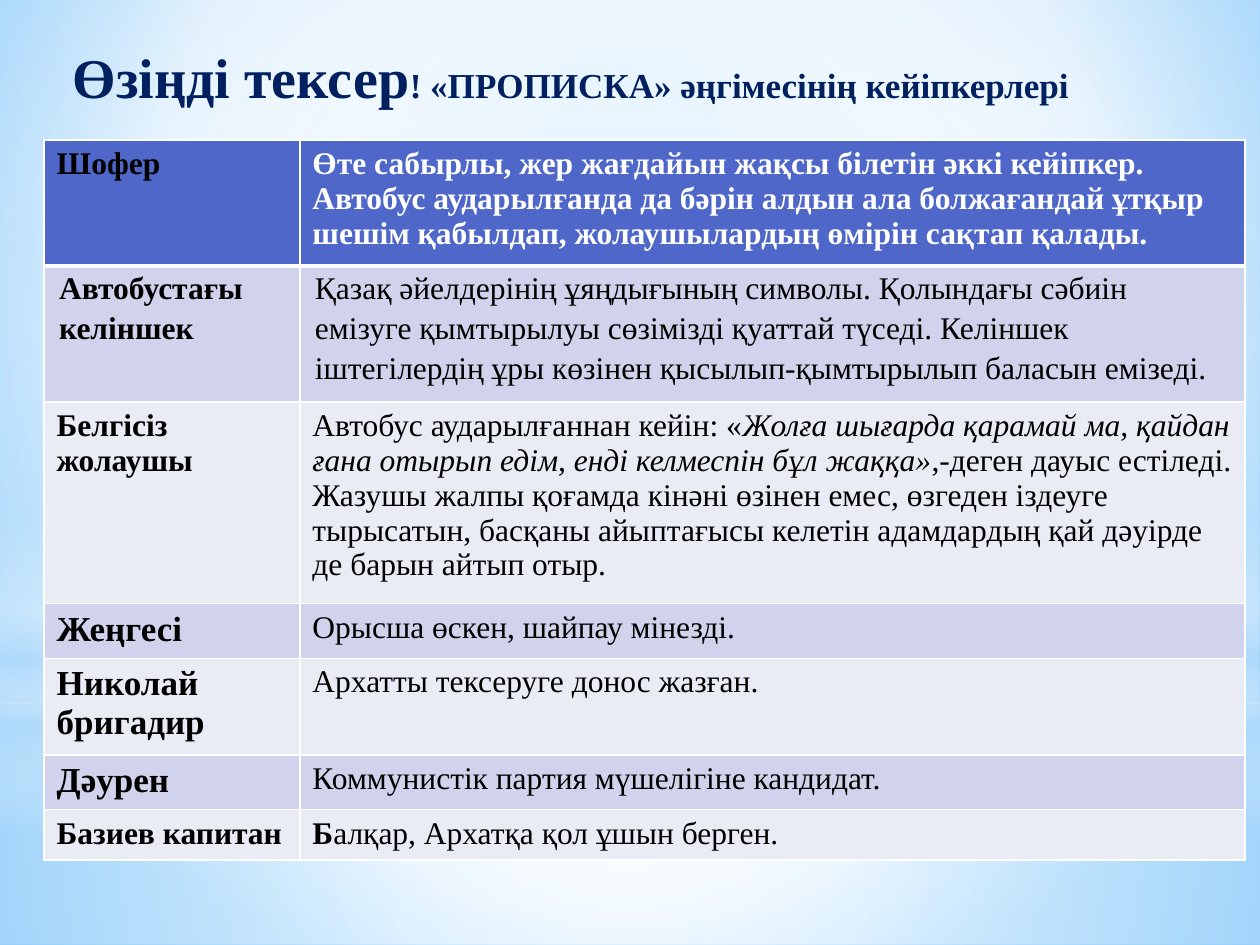
from lxml import etree
from pptx import Presentation
from pptx.dml.color import RGBColor
from pptx.enum.shapes import MSO_SHAPE
from pptx.oxml.ns import qn
from pptx.util import Inches, Pt

RECTANGLE = MSO_SHAPE.RECTANGLE
OVAL = MSO_SHAPE.OVAL
FONT = "Times New Roman"


def set_gradient(properties, stops, focus):
    gradient = etree.Element(qn("a:gradFill"), rotWithShape="1")
    stop_list = etree.SubElement(gradient, qn("a:gsLst"))
    for position, color, opacity in stops:
        stop = etree.SubElement(stop_list, qn("a:gs"), pos=str(position * 1000))
        color_element = etree.SubElement(stop, qn("a:srgbClr"), val=color)
        if opacity < 100:
            etree.SubElement(color_element, qn("a:alpha"), val=str(opacity * 1000))
    if focus:
        path = etree.SubElement(gradient, qn("a:path"), path="circle")
        sides = {side: str(value * 1000) for side, value in zip("ltrb", focus)}
        etree.SubElement(path, qn("a:fillToRect"), **sides)
    else:
        etree.SubElement(gradient, qn("a:lin"), ang="5400000", scaled="0")
    properties.replace(properties.find(qn("a:noFill")), gradient)


def add_run(paragraph, text, size, color, bold=False, italic=False):
    run = paragraph.add_run()
    run.text = text
    run.font.name = FONT
    run.font.size = Pt(size)
    run.font.bold = bold
    run.font.italic = italic
    run.font.color.rgb = RGBColor.from_string(color)


presentation = Presentation()
presentation.slide_width = Inches(10)
presentation.slide_height = Inches(7.5)
slide = presentation.slides.add_slide(presentation.slide_layouts[6])

slide.background.fill.background()
set_gradient(
    slide.element.find(".//" + qn("p:bgPr")),
    [(0, "9ED5FF", 100), (60, "FFFFFF", 100), (100, "5BB9FF", 100)],
    (20, 10, 20, 60),
)

center = (50, 50, 50, 50)
glows = [
    (RECTANGLE, 5.58, 1.92, center,
     [(0, "FFFFFF", 91), (37, "FFFFFF", 76), (100, "B4DCFA", 79)]),
    (RECTANGLE, 0, 5.58, center,
     [(0, "FFFFFF", 89), (48, "FFFFFF", 62), (100, "B4DCFA", 79)]),
    (RECTANGLE, 4.12, 2.5, None,
     [(0, "FFFFFF", 0), (29, "FFFFFF", 30), (45, "B4DCFA", 40),
      (55, "FFFFFF", 26), (65, "B4DCFA", 60), (100, "FFFFFF", 0)]),
    (OVAL, 1.75, 5.58, center, [(0, "FFFFFF", 100), (56, "FFFFFF", 0)]),
]
for kind, top, height, focus, stops in glows:
    shape = slide.shapes.add_shape(kind, 0, Inches(top), Inches(10), Inches(height))
    shape.shadow.inherit = False
    shape.line.fill.background()
    shape.fill.background()
    set_gradient(shape.element.spPr, stops, focus)

title = slide.shapes.add_textbox(Inches(0.43), Inches(0.29), Inches(9.37), Inches(1.34))
title.text_frame.word_wrap = True
paragraph = title.text_frame.paragraphs[0]
paragraph.space_before = Pt(3)
paragraph.space_after = Pt(3)
paragraph._p.get_or_add_pPr().set("marL", str(Inches(0.05)))
add_run(paragraph, "Өзіңді тексер", 32, "002060", bold=True)
add_run(paragraph, "! «ПРОПИСКА» әңгімесінің кейіпкерлері", 20, "002060", bold=True)

characters = [
    (0.93, "Шофер", 18, [
        ("Өте сабырлы, жер жағдайын жақсы білетін әккі кейіпкер. Автобус аударылғанда да "
         "бәрін алдын ала болжағандай ұтқыр шешім қабылдап, жолаушылардың өмірін сақтап қалады.",
         True, False)]),
    (1.08, "Автобустағы келіншек", 18, [
        ("Қазақ әйелдерінің ұяңдығының символы. Қолындағы сәбиін емізуге қымтырылуы сөзімізді "
         "қуаттай түседі. Келіншек іштегілердің ұры көзінен қысылып-қымтырылып баласын емізеді.",
         False, False)]),
    (1.48, "Белгісіз жолаушы", 18, [
        ("Автобус аударылғаннан кейін: «", False, False),
        ("Жолға шығарда қарамай ма, қайдан ғана отырып едім, енді келмеспін бұл жаққа»",
         False, True),
        (",-деген дауыс естіледі. Жазушы жалпы қоғамда кінәні өзінен емес, өзгеден іздеуге "
         "тырысатын, басқаны айыптағысы келетін адамдардың қай дәуірде де барын айтып отыр.",
         False, False)]),
    (0.4, "Жеңгесі", 20, [("Орысша өскен, шайпау мінезді.", False, False)]),
    (0.71, "Николай бригадир", 20, [("Архатты тексеруге донос жазған.", False, False)]),
    (0.4, "Дәурен", 20, [("Коммунистік партия мүшелігіне кандидат.", False, False)]),
    (0.38, "Базиев капитан", 18, [
        ("Б", True, False), ("алқар, Архатқа қол ұшын берген.", False, False)]),
]
table_height = sum(character[0] for character in characters)
table = slide.shapes.add_table(
    len(characters), 2, Inches(0.35), Inches(1.11), Inches(9.53), Inches(table_height)
).table
table.columns[0].width = Inches(2.03)
table.columns[1].width = Inches(7.5)

for row_index, (height, name, name_size, description) in enumerate(characters):
    table.rows[row_index].height = Inches(height)
    fill_color = "4E67C8" if row_index == 0 else ("E9EBF5", "D0D3EB")[row_index % 2]
    name_cell, description_cell = table.rows[row_index].cells
    add_run(name_cell.text_frame.paragraphs[0], name, name_size, "000000", bold=True)
    text_color = "FFFFFF" if row_index == 0 else "000000"
    for text, bold, italic in description:
        add_run(description_cell.text_frame.paragraphs[0], text, 18, text_color, bold, italic)

    for cell in (name_cell, description_cell):
        cell.fill.solid()
        cell.fill.fore_color.rgb = RGBColor.from_string(fill_color)
        if row_index == 1:
            cell.margin_left = cell.margin_right = Inches(0.12)
            cell.margin_top = cell.margin_bottom = 0
            cell.text_frame.paragraphs[0].line_spacing = 1.15
            cell.text_frame.paragraphs[0].space_after = Pt(10)
        cell_properties = cell._tc.get_or_add_tcPr()
        for position, side in enumerate(("lnL", "lnR", "lnT", "lnB")):
            is_header_rule = (row_index, side) in ((0, "lnB"), (1, "lnT"))
            border = etree.Element(qn("a:" + side), w=str(Pt(3 if is_header_rule else 1)))
            border_fill = etree.SubElement(border, qn("a:solidFill"))
            etree.SubElement(border_fill, qn("a:srgbClr"), val="FFFFFF")
            cell_properties.insert(position, border)

presentation.save("out.pptx")
